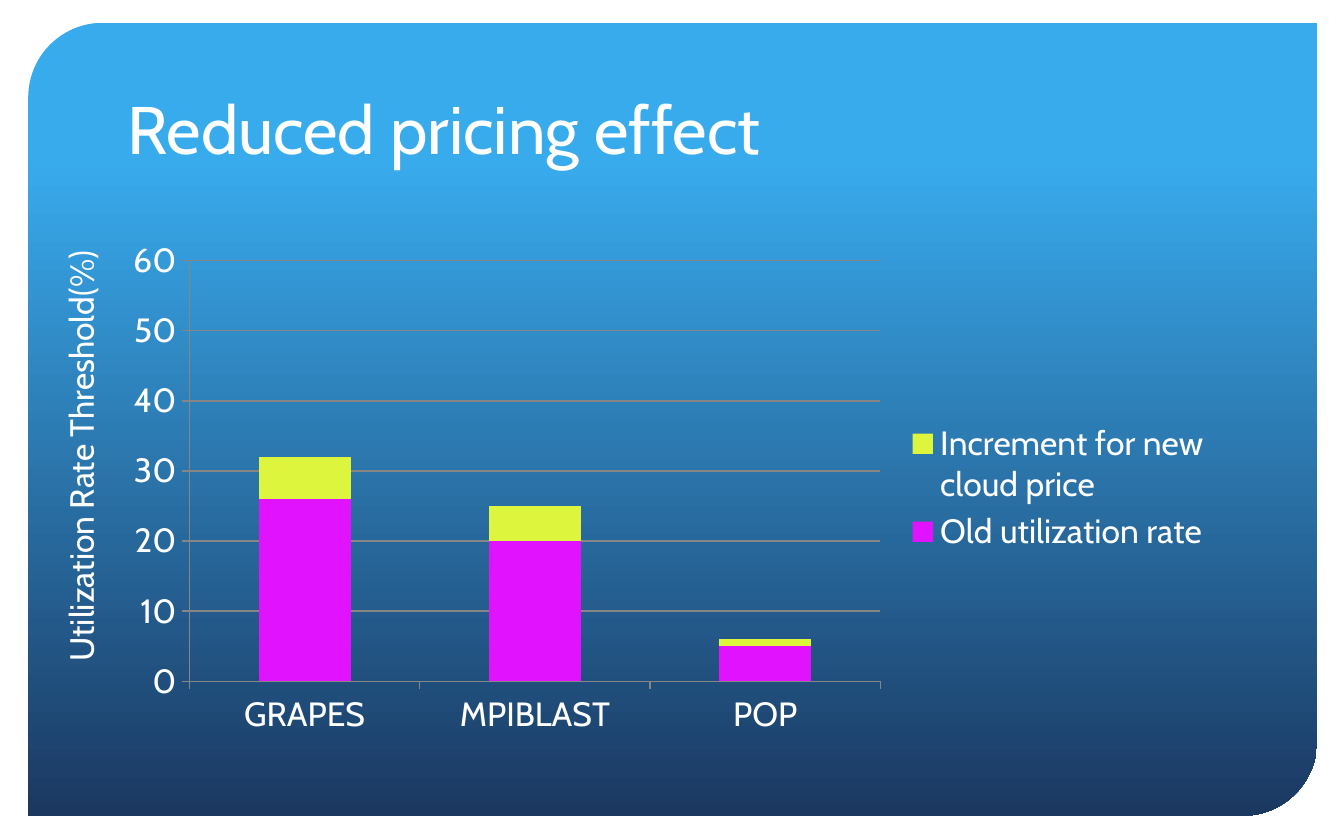
from lxml import etree
from pptx import Presentation
from pptx.chart.data import CategoryChartData
from pptx.dml.color import RGBColor
from pptx.enum.chart import XL_CHART_TYPE, XL_LEGEND_POSITION, XL_TICK_MARK
from pptx.enum.shapes import MSO_SHAPE
from pptx.enum.text import MSO_ANCHOR
from pptx.oxml.ns import qn
from pptx.util import Inches, Pt

WHITE = RGBColor(0xFF, 0xFF, 0xFF)
SKY = RGBColor(0x38, 0xAB, 0xED)
NAVY = RGBColor(0x1B, 0x38, 0x61)
GRID_GREY = RGBColor(0x86, 0x86, 0x86)
MAGENTA = RGBColor(0xE1, 0x13, 0xFF)
LIME = RGBColor(0xDD, 0xF5, 0x3D)


class SlideBuilder:
    font_name = "Cabin"
    body_size = 18

    def __init__(self, slide):
        self.slide = slide

    def style(self, font, size):
        font.name = self.font_name
        font.size = Pt(size)
        font.color.rgb = WHITE

    def panel(self, left, top, width, height):
        panel = self.slide.shapes.add_shape(
            MSO_SHAPE.ROUND_2_DIAG_RECTANGLE,
            Inches(left), Inches(top), Inches(width), Inches(height))
        panel.adjustments[0] = 0.094
        panel.adjustments[1] = 0
        panel.shadow.inherit = False
        panel.line.fill.background()
        panel.fill.gradient()
        panel.fill.gradient_angle = 270
        stops = panel.fill.gradient_stops
        for stop, position, color in zip(stops, (0.17, 1), (SKY, NAVY)):
            stop.position = position
            stop.color.rgb = color

    def text(self, words, left, top, width, height, size=body_size,
             anchor=MSO_ANCHOR.TOP, upward=False):
        box = self.slide.shapes.add_textbox(
            Inches(left), Inches(top), Inches(width), Inches(height))
        frame = box.text_frame
        frame.text = words
        frame.word_wrap = not upward
        frame.vertical_anchor = anchor
        if upward:
            frame._txBody.bodyPr.set("vert", "vert270")
        self.style(frame.paragraphs[0].runs[0].font, size)

    def stacked_columns(self, categories, series, left, top, width, height):
        """Draw a stacked column chart; series holds (name, values, color)."""
        data = CategoryChartData()
        data.categories = categories
        for name, values, _ in series:
            data.add_series(name, values)
        chart = self.slide.shapes.add_chart(
            XL_CHART_TYPE.COLUMN_STACKED, Inches(left), Inches(top),
            Inches(width), Inches(height), data).chart
        self.style(chart.font, self.body_size)
        chart.has_title = False

        plot = chart.plots[0]
        plot.overlap = 100
        plot.gap_width = 150
        plot.vary_by_categories = False
        for column, (_, _, color) in zip(plot.series, series):
            column.format.fill.solid()
            column.format.fill.fore_color.rgb = color

        value_axis = chart.value_axis
        value_axis.minimum_scale = 0
        value_axis.maximum_scale = 60
        value_axis.major_unit = 10
        value_axis.has_major_gridlines = True
        for axis in (chart.category_axis, value_axis):
            axis.major_tick_mark = XL_TICK_MARK.OUTSIDE
            self.style(axis.tick_labels.font, self.body_size)
        for line in (value_axis.major_gridlines.format.line,
                     value_axis.format.line, chart.category_axis.format.line):
            line.color.rgb = GRID_GREY
            line.width = Pt(0.75)

        chart.has_legend = True
        chart.legend.position = XL_LEGEND_POSITION.RIGHT
        chart.legend.include_in_layout = False
        self.style(chart.legend.font, self.body_size)
        self.place_plot(chart, x=0.07, y=0.06, w=0.62, h=0.815)

    def place_plot(self, chart, **fractions):
        """Fix the inner plot area, in fractions of the chart's size."""
        area = chart._chartSpace.chart.plotArea
        for old in area.findall(qn("c:layout")):
            area.remove(old)
        layout = etree.Element(qn("c:layout"))
        area.insert(0, layout)
        manual = etree.SubElement(layout, qn("c:manualLayout"))
        settings = {"layoutTarget": "inner", "xMode": "edge", "yMode": "edge",
                    **fractions}
        for tag, value in settings.items():
            etree.SubElement(manual, qn(f"c:{tag}")).set("val", str(value))


def main():
    deck = Presentation()
    deck.slide_width = Inches(10)
    deck.slide_height = Inches(6.25)
    builder = SlideBuilder(deck.slides.add_slide(deck.slide_layouts[6]))

    builder.panel(0.21, 0.17, 9.59, 5.9)
    builder.text("Reduced pricing effect", 0.85, 0.35, 8.29, 0.95,
                 size=36, anchor=MSO_ANCHOR.BOTTOM)
    builder.stacked_columns(
        ("GRAPES", "MPIBLAST", "POP"),
        (("Old utilization rate", (26, 20, 5), MAGENTA),
         ("Increment for new cloud price", (6, 5, 1), LIME)),
        0.83, 1.71, 8.29, 3.84)
    builder.text("Utilization Rate Threshold(%)", 0.4, 1.63, 0.5, 3.39,
                 upward=True)
    deck.save("out.pptx")


if __name__ == "__main__":
    main()
